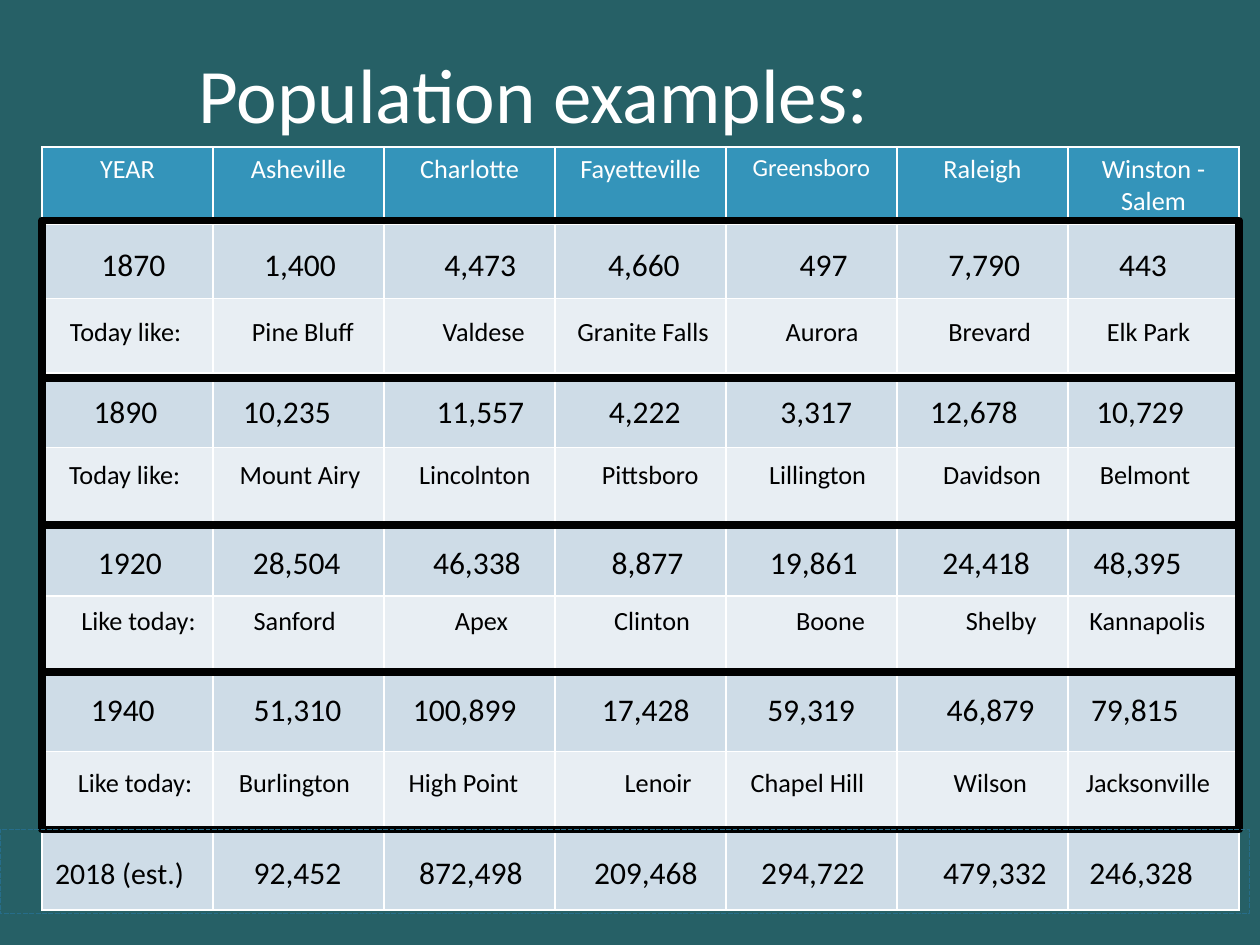
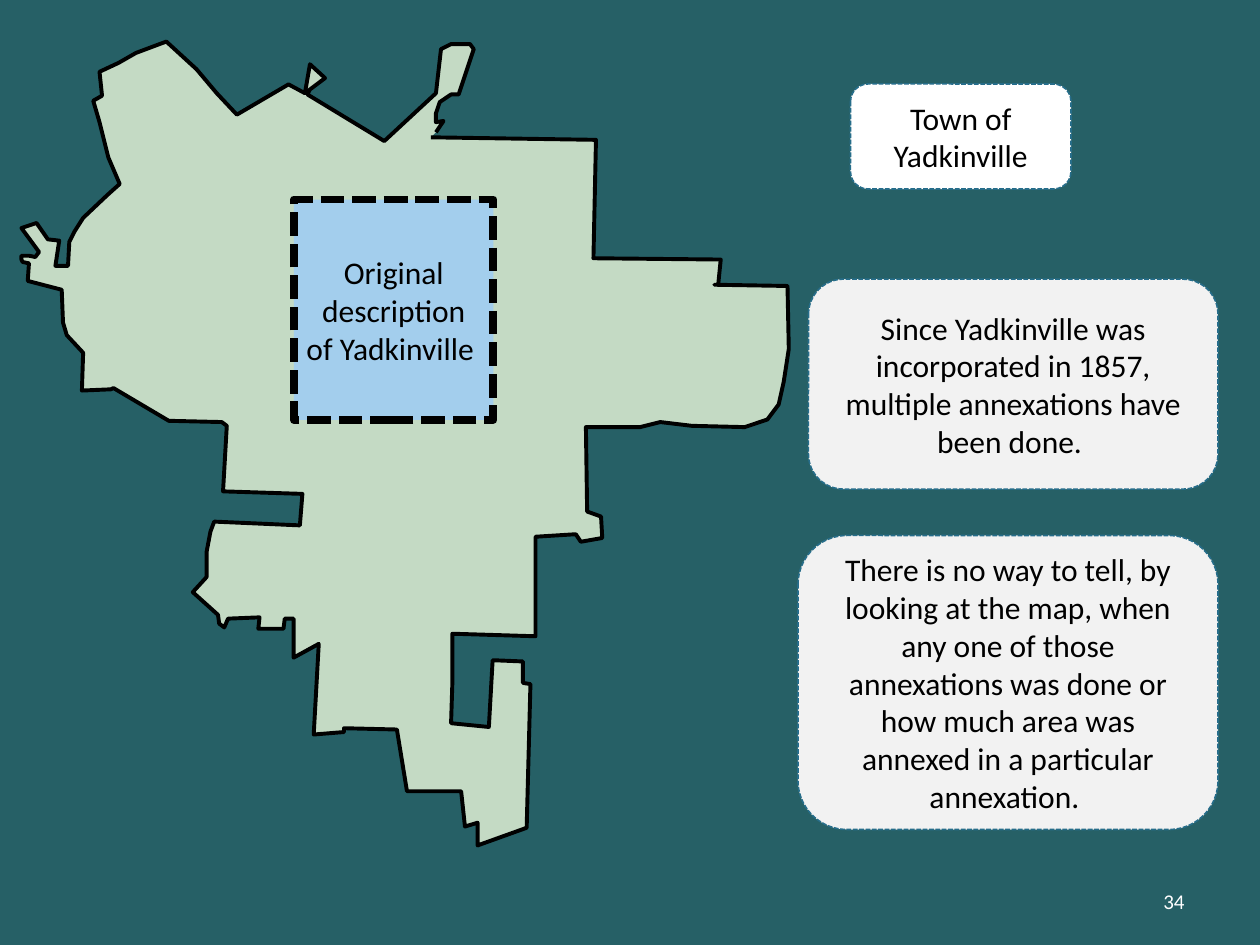
import pptx
import pptx.util
import pptx.dml.color
import pptx.enum.dml
import pptx.enum.shapes
import pptx.enum.text
import pptx.oxml
import pptx.oxml.ns

Pt = pptx.util.Pt
RGB = pptx.dml.color.RGBColor
SHAPE = pptx.enum.shapes.MSO_SHAPE
ALIGN = pptx.enum.text.PP_ALIGN
ANCHOR = pptx.enum.text.MSO_ANCHOR
DASH = pptx.enum.dml.MSO_LINE.SQUARE_DOT
NS = pptx.oxml.ns.nsdecls("a")

TEAL = RGB(0x26, 0x60, 0x66)
BLUE = RGB(0x34, 0x94, 0xBA)
EDGE = RGB(0x26, 0x6D, 0x8A)
BAND = RGB(0xCE, 0xDC, 0xE7)
PALE = RGB(0xE8, 0xEE, 0xF3)
SKY = RGB(0xA3, 0xCE, 0xED)
SAGE = RGB(0xC4, 0xDA, 0xC4)
GREY = RGB(0xF2, 0xF2, 0xF2)
WHITE = RGB(0xFF, 0xFF, 0xFF)
BLACK = RGB(0, 0, 0)
FONT = "Calibri"

HEADS = ["YEAR", "Asheville", "Charlotte", "Fayetteville", "Greensboro", "Raleigh",
         "Winston - Salem"]
# Top and height of each line below the table's top, text size, then (left, text) pairs
LINES = [
    (43, 48, 18, [(58, "1870"), (151, "1,400"), (254, "4,473"), (347.5, "4,660"),
                  (457, "497"), (542, "7,790"), (639.5, "443")]),
    (90, 30, 15, [(40, "Today like:"), (144, "Pine Bluff"), (253, "Valdese"),
                  (330, "Granite Falls"), (449, "Aurora"), (542, "Brevard"),
                  (632.5, "Elk Park")]),
    (130, 42, 18, [(53.5, "1890"), (139, "10,235"), (249.5, "11,557"), (348, "4,222"),
                   (446, "3,317"), (531.5, "12,678"), (626.5, "10,729")]),
    (175, 24, 15, [(39.5, "Today like:"), (137, "Mount Airy"), (239.5, "Lincolnton"),
                   (344, "Pittsboro"), (439.5, "Lillington"), (539, "Davidson"),
                   (628.5, "Belmont")]),
    (216, 42, 18, [(56, "1920"), (144.5, "28,504"), (247.5, "46,338"), (349.5, "8,877"),
                   (440, "19,861"), (538.5, "24,418"), (625, "48,395")]),
    (258, 24, 15, [(46.5, "Like today:"), (145, "Sanford"), (260, "Apex"),
                   (351, "Clinton"), (455, "Boone"), (552, "Shelby"),
                   (622.5, "Kannapolis")]),
    (300, 42, 18, [(52, "1940"), (145, "51,310"), (236, "100,899"), (344, "17,428"),
                   (438.5, "59,319"), (541, "46,879"), (623.5, "79,815")]),
    (342, 42, 15, [(44.5, "Like today:"), (136.5, "Burlington"), (233.5, "High Point"),
                   (357, "Lenoir"), (429, "Chapel Hill"), (545, "Wilson"),
                   (620.5, "Jacksonville")]),
    (390, 48, 18, [(31.5, "2018 (est.)"), (145, "92,452"), (239.5, "872,498"),
                   (339.5, "209,468"), (435, "294,722"), (539, "479,332"),
                   (622.5, "246,328")]),
]
FRAMES = [(42, 90), (132, 84), (216, 84), (300, 90)]
ODD_SIZES = {"Greensboro": 14, "2018 (est.)": 17}

# Town limits, in hundredths of an inch
LIMITS = [
    (342, 109), (473, 111), (471, 205), (572, 206), (570, 226), (567, 226),
    (625, 227), (626, 277), (622, 303), (618, 321), (609, 333), (591, 339),
    (549, 338), (524, 335), (508, 339), (465, 339), (466, 406), (477, 410),
    (478, 427), (461, 430), (457, 424), (425, 426), (425, 505), (359, 503),
    (359, 542), (358, 574), (388, 577), (391, 524), (415, 525), (415, 542),
    (421, 543), (418, 657), (379, 671), (379, 653), (369, 656), (366, 628),
    (323, 628), (315, 579), (273, 578), (273, 581), (249, 583), (253, 511),
    (233, 522), (233, 491), (226, 491), (225, 499), (205, 499), (206, 490),
    (181, 491), (178, 498), (174, 495), (173, 488), (153, 470), (164, 458),
    (164, 438), (167, 422), (170, 414), (238, 417), (240, 392), (177, 390),
    (180, 338), (176, 335), (134, 334), (90, 308), (88, 309), (65, 310),
    (66, 280), (53, 266), (50, 256), (49, 230), (22, 223), (23, 209),
    (18, 208), (17, 206), (17, 203), (23, 203), (28, 204), (31, 200),
    (17, 181), (29, 177), (38, 190), (47, 191), (44, 211), (54, 211),
    (55, 192), (59, 184), (66, 173), (85, 155), (95, 146), (86, 125),
    (79, 97), (74, 80), (81, 76), (79, 57), (94, 50), (108, 42),
    (132, 33), (156, 55), (172, 74), (188, 91), (229, 67), (242, 74),
    (246, 51), (258, 62), (246, 71), (244, 75), (305, 112), (346, 74),
    (350, 39), (358, 35), (373, 35), (376, 39), (364, 75), (358, 75),
    (349, 81), (346, 90), (346, 95), (346, 97), (352, 96), (346, 105),
]


def style(run, size, color):
    run.font.name = FONT
    run.font.size = Pt(size)
    run.font.color.rgb = color


def write(frame, text, size, color=BLACK, align=ALIGN.CENTER):
    frame.text = text
    frame.word_wrap = True
    frame.vertical_anchor = ANCHOR.MIDDLE
    par = frame.paragraphs[0]
    par.alignment = align
    for run in par.runs:
        style(run, size, color)


def paint(shape, fill, line, width, dash=None):
    """Set fill (None for hollow) and outline, without shadow."""
    shape.shadow.inherit = False
    if fill is None:
        shape.fill.background()
    else:
        shape.fill.solid()
        shape.fill.fore_color.rgb = fill
    shape.line.color.rgb = line
    shape.line.width = Pt(width)
    if dash:
        shape.line.dash_style = dash


def add_box(slide, box, kind, fill, line, width, dash=None, text=None):
    shape = slide.shapes.add_shape(kind, *map(Pt, box))
    paint(shape, fill, line, width, dash)
    if text:
        write(shape.text_frame, text, 18)
    return shape


def set_title(slide, box, text):
    title = slide.shapes.title
    title.left, title.top, title.width, title.height = map(Pt, box)
    write(title.text_frame, text, 44, WHITE)


def add_number(slide, text):
    note = slide.shapes.add_textbox(Pt(516), Pt(500.5), Pt(168), Pt(29))
    write(note.text_frame, text, 12, WHITE, ALIGN.RIGHT)


def fill_cell(cell, color):
    """Fill a cell and give it thin white borders."""
    cell.fill.solid()
    cell.fill.fore_color.rgb = color
    props = cell._tc.get_or_add_tcPr()
    for i, side in enumerate("LRTB"):
        props.insert(i, pptx.oxml.parse_xml(
            f'<a:ln{side} {NS} w="12700"><a:solidFill>'
            f'<a:srgbClr val="{WHITE}"/></a:solidFill></a:ln{side}>'))


def add_grid(slide, box, colors):
    """Add a table with one row for each colour."""
    cols = len(HEADS)
    table = slide.shapes.add_table(len(colors), cols, *map(Pt, box)).table
    table.first_row = table.horz_banding = False
    for col in table.columns:
        col.width = Pt(box[2] / cols)
    for row, color in zip(table.rows, colors):
        row.height = Pt(box[3] / len(colors))
        for cell in row.cells:
            fill_cell(cell, color)
    return table


def write_line(frame, size, items):
    """Set the items on one line, each at its own left tab stop."""
    start = items[0][0]
    frame.margin_left, frame.margin_right = Pt(start), Pt(0)
    write(frame, items[0][1], ODD_SIZES.get(items[0][1], size), align=ALIGN.LEFT)
    par = frame.paragraphs[0]
    rest = par.add_run()
    rest.text = "".join("\t" + text for _, text in items[1:])
    style(rest, size, BLACK)
    stops = "".join(f'<a:tab pos="{Pt(x - start)}" algn="l"/>' for x, _ in items[1:])
    par._p.get_or_add_pPr().append(
        pptx.oxml.parse_xml(f"<a:tabLst {NS}>{stops}</a:tabLst>"))


def add_counts(slide, box):
    """Place the tables, the frame of each year and the lines of figures."""
    left, top, width, height = box
    table = add_grid(slide, (left, top, width, 340.5), [BLUE] + [BAND, PALE] * 3 + [BAND])
    for cell, head in zip(table.rows[0].cells, HEADS):
        write(cell.text_frame, head, ODD_SIZES.get(head, 15), WHITE)
        cell.vertical_anchor = ANCHOR.TOP
    add_grid(slide, (left, top + 300, width, height - 300), [BAND, PALE, BAND])
    for drop, tall in FRAMES:
        add_box(slide, (left, top + drop, width, tall), SHAPE.RECTANGLE, None, BLACK, 4.5)
    for drop, tall, size, items in LINES:
        area = 0, top + drop, left + width + 6, tall
        if items is LINES[-1][-1]:
            line = add_box(slide, area, SHAPE.RECTANGLE, None, EDGE, 0.9, DASH)
        else:
            line = slide.shapes.add_textbox(*map(Pt, area))
        write_line(line.text_frame, size, items)


def add_map(slide, left, top):
    pen = slide.shapes.build_freeform(*LIMITS[0], scale=Pt(0.72))
    pen.add_line_segments(LIMITS[1:], close=False)
    paint(pen.convert_to_shape(Pt(left), Pt(top)), SAGE, BLACK, 2.25)
    add_box(slide, (left + 168, top + 114, 114, 126), SHAPE.RECTANGLE, SKY, BLACK, 4.5,
            DASH, "Original description of Yadkinville ")


def add_note(slide, box, fill, text):
    add_box(slide, box, SHAPE.ROUNDED_RECTANGLE, fill, EDGE, 0.9, DASH, text)


def build_counts(deck):
    slide = deck.slides.add_slide(deck.slide_layouts[5])
    set_title(slide, (32, 22, 546, 62), "Population examples:")
    add_counts(slide, (24, 84, 684, 436))


def build_town(deck):
    slide = deck.slides.add_slide(deck.slide_layouts[6])
    add_map(slide, 0, 0)
    add_note(slide, (486, 48, 126, 60), WHITE, "Town of Yadkinville")
    add_note(slide, (462, 159.5, 234, 120), GREY,
             "Since Yadkinville was incorporated in 1857, multiple annexations have been done. ")
    add_note(slide, (456, 306, 240, 168), GREY,
             "There is no way to tell, by looking at the map, when any one of those annexations "
             "was done or how much area was annexed in a particular annexation. ")
    add_number(slide, "34")


def main():
    deck = pptx.Presentation()
    deck.slide_width, deck.slide_height = Pt(720), Pt(540)
    ground = deck.slide_master.background.fill
    ground.solid()
    ground.fore_color.rgb = TEAL
    build_counts(deck)
    build_town(deck)
    deck.save("out.pptx")


if __name__ == "__main__":
    main()
